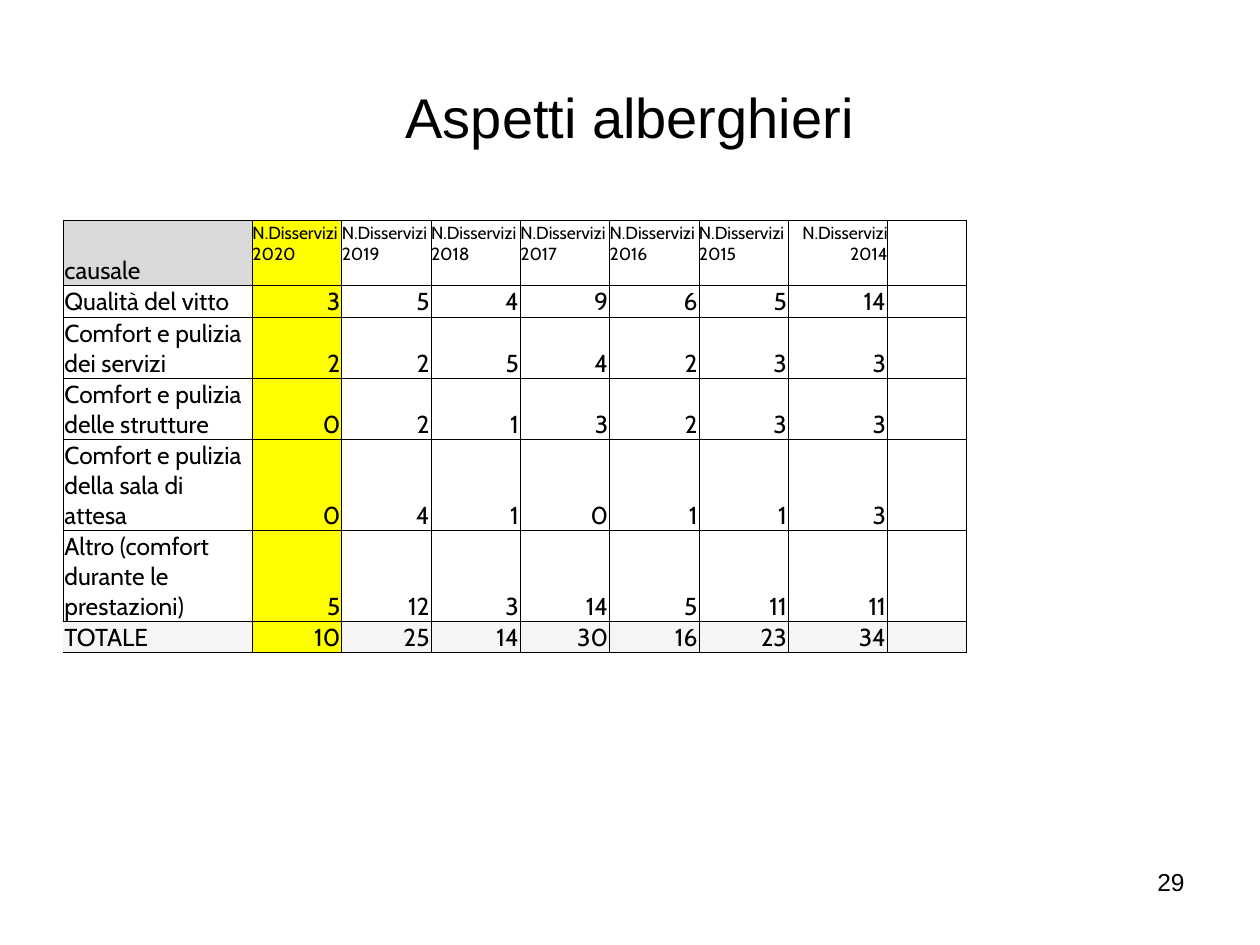
"""Build the slide on hotel-type services with its table of complaints by year."""
from lxml import etree
from pptx import Presentation
from pptx.dml.color import RGBColor
from pptx.enum.text import MSO_ANCHOR, PP_ALIGN
from pptx.oxml.ns import qn
from pptx.util import Cm, Pt

LEFT, MID, RIGHT = PP_ALIGN.LEFT, PP_ALIGN.CENTER, PP_ALIGN.RIGHT
TOP, CENTRE, LOW = MSO_ANCHOR.TOP, MSO_ANCHOR.MIDDLE, MSO_ANCHOR.BOTTOM
BLACK = RGBColor(0, 0, 0)
WHITE = RGBColor(255, 255, 255)
YELLOW = RGBColor(255, 255, 0)
GREY = RGBColor(0xD9, 0xD9, 0xD9)
PALE = RGBColor(0xF5, 0xF5, 0xF5)

TITLE = "Aspetti alberghieri"
PAGE = "29"
YEARS = range(2020, 2013, -1)
ROWS = [
    ("Qualità del vitto", 1, [3, 5, 4, 9, 6, 5, 14]),
    ("Comfort e pulizia dei servizi", 2, [2, 2, 5, 4, 2, 3, 3]),
    ("Comfort e pulizia delle strutture", 2, [0, 2, 1, 3, 2, 3, 3]),
    ("Comfort e pulizia della sala di attesa", 2, [0, 4, 1, 0, 1, 1, 3]),
    ("Altro (comfort durante le prestazioni)", 3, [5, 12, 3, 14, 5, 11, 11]),
    ("TOTALE", 1, [10, 25, 14, 30, 16, 23, 34]),
]
HEAD = ["causale"] + [f"N.Disservizi {year}" for year in YEARS] + [""]
GRID = [HEAD] + [[name, *map(str, nums), ""] for name, _, nums in ROWS]
WIDTHS = [3.82] + [1.8] * 6 + [2, 1.6]
HEIGHTS = [1.31] + [0.61 * lines for _, lines, _ in ROWS]
LAST_ROW, LAST_COL = len(GRID) - 1, len(HEAD) - 1

HEAD_PAD = {"margin_left": 0, "margin_top": Cm(0.03), "margin_right": 0,
            "margin_bottom": 0, "vertical_anchor": TOP}
BODY_PAD = {"margin_left": Cm(0.03), "margin_top": Cm(0.03),
            "margin_right": Cm(0.03), "margin_bottom": 0,
            "vertical_anchor": LOW}


def apply(item, form):
    for key, value in form.items():
        setattr(item, key, value)


def write(para, text, size, face, align):
    para.alignment = align
    if not text:
        para._p.get_or_add_endParaRPr().set("sz", str(size * 100))
        return
    run = para.add_run()
    run.text = text
    apply(run.font, {"size": Pt(size), "name": face})
    run.font.color.rgb = BLACK


def border(cell, sides):
    props = cell._tc.get_or_add_tcPr()
    for spot, (side, width) in enumerate(sides.items()):
        line = etree.Element(qn(f"a:ln{side}"), w=str(Pt(width)))
        if width:
            fill = etree.SubElement(line, qn("a:solidFill"))
            etree.SubElement(fill, qn("a:srgbClr"), val=str(BLACK))
        else:
            etree.SubElement(line, qn("a:noFill"))
        props.insert(spot, line)


def shade(row, col):
    if col == 1:
        return YELLOW
    if row == LAST_ROW:
        return PALE
    return GREY if row == col == 0 else WHITE


def style(cell, text, row, col):
    small = row == 0 and col > 0
    apply(cell, HEAD_PAD if small else BODY_PAD)
    cell.fill.solid()
    cell.fill.fore_color.rgb = shade(row, col)
    align = LEFT if col == 0 or (small and col < LAST_COL - 1) else RIGHT
    write(cell.text_frame.paragraphs[0], text, 10 if small else 14,
          "Cabin", align)
    total = row == LAST_ROW
    border(cell, {"L": 0 if total and col == 0 else 0.5, "R": 0.5,
                  "T": 1 if total else 0.5,
                  "B": 1 if row >= LAST_ROW - 1 else 0.5})


def main():
    deck = Presentation()
    apply(deck, {"slide_width": Cm(25.4), "slide_height": Cm(19.05)})
    slide = deck.slides.add_slide(deck.slide_layouts[5])

    title = slide.shapes.title
    apply(title, {"left": Cm(1.27), "top": Cm(0.76),
                  "width": Cm(22.86), "height": Cm(3.18)})
    title.text_frame.vertical_anchor = CENTRE
    write(title.text_frame.paragraphs[0], TITLE, 32, "Arial", MID)

    frame = slide.shapes.add_table(
        len(GRID), len(HEAD), Cm(1.27), Cm(4.45),
        Cm(sum(WIDTHS)), Cm(sum(HEIGHTS)))
    table = frame.table
    apply(table, {"first_row": False, "horz_banding": False})
    for col, width in zip(table.columns, WIDTHS):
        col.width = Cm(width)
    for row, height in zip(table.rows, HEIGHTS):
        row.height = Cm(height)
    for row, texts in enumerate(GRID):
        for col, text in enumerate(texts):
            style(table.cell(row, col), text, row, col)

    page = slide.shapes.add_textbox(Cm(18.21), Cm(17.35), Cm(5.92), Cm(1.32))
    page.text_frame.word_wrap = True
    write(page.text_frame.paragraphs[0], PAGE, 14, "Arial", RIGHT)
    deck.save("out.pptx")


if __name__ == "__main__":
    main()
